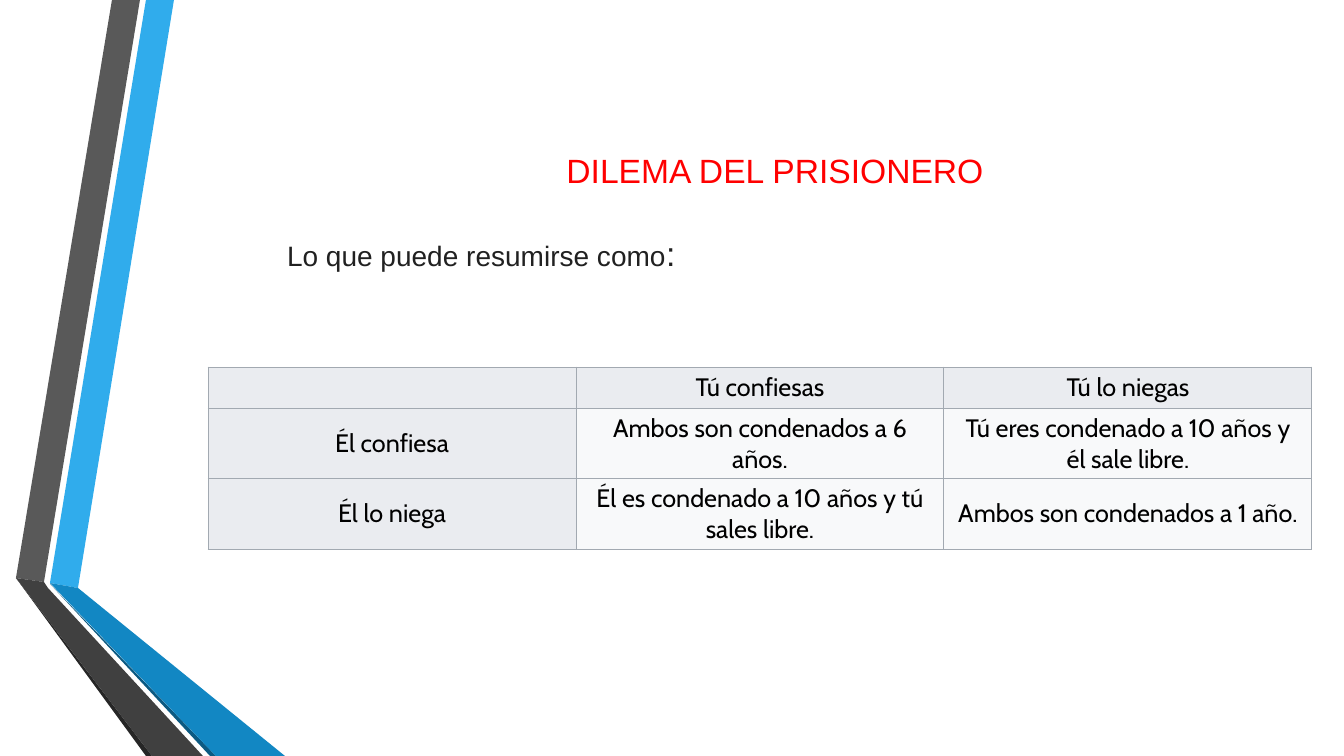
from lxml.etree import SubElement
from pptx import Presentation
from pptx.dml.color import RGBColor
from pptx.enum.text import MSO_ANCHOR, PP_ALIGN
from pptx.oxml.ns import qn
from pptx.util import Pt

PX = 9071  # EMU per px
SLIDE_WIDTH, SLIDE_HEIGHT = 1344, 756
COLORS = {
    "blue": "30ACEC", "deep_blue": "1287C3", "navy": "0C5A82",
    "gray": "595959", "dark_gray": "404040", "black_gray": "262626",
    "title": "FF0000", "body": "212121", "cell_text": "000000",
    "header": "EAECF0", "cell": "F8F9FA", "border": "A2A9B1",
}
RIBBONS = [
    ("blue", [(50, 583), (78, 588), (174, 0), (146, 0)]),
    ("gray", [(140, 0), (112, 0), (16, 578), (44, 582)]),
    ("black_gray", [(16, 578), (146, 756), (152, 756)]),
    ("navy", [(50, 584), (210, 756), (216, 756)]),
    ("deep_blue", [(50, 583), (216, 756), (285, 756), (78, 588)]),
    ("dark_gray", [(203, 756), (48, 588), (44, 582), (16, 578), (152, 756)]),
]
OUTCOMES = [
    ["", "Tú confiesas", "Tú lo niegas"],
    ["Él confiesa", "Ambos son condenados a 6 años.",
     "Tú eres condenado a 10 años y él sale libre."],
    ["Él lo niega", "Él es condenado a 10 años y tú sales libre.",
     "Ambos son condenados a 1 año."],
]


def rgb(name):
    return RGBColor.from_string(COLORS[name])


def to_emu(box):
    return [length * PX for length in box]


def add_run(paragraph, text, color, **font_format):
    run = paragraph.add_run()
    run.text = text
    run.font.color.rgb = rgb(color)
    for attribute, value in font_format.items():
        setattr(run.font, attribute, value)


def format_frame(frame, anchor):
    settings = {
        "margin_left": 0, "margin_right": 0, "margin_top": 0,
        "margin_bottom": 0, "word_wrap": True, "vertical_anchor": anchor,
    }
    for attribute, value in settings.items():
        setattr(frame, attribute, value)


def add_ribbons(slide, left, top):
    for color, points in RIBBONS:
        builder = slide.shapes.build_freeform(*points[0], scale=PX)
        builder.add_line_segments(points[1:], close=True)
        shape = builder.convert_to_shape(left * PX, top * PX)
        shape.shadow.inherit = False
        shape.fill.solid()
        shape.fill.fore_color.rgb = rgb(color)
        shape.line.fill.background()


def place_title(slide, box):
    title = slide.shapes.title
    title.left, title.top, title.width, title.height = to_emu(box)
    format_frame(title.text_frame, MSO_ANCHOR.MIDDLE)
    paragraph = title.text_frame.paragraphs[0]
    paragraph.alignment = PP_ALIGN.CENTER
    add_run(paragraph, "DILEMA DEL PRISIONERO", "title",
            name="Arial", size=Pt(24))


def add_introduction(slide, box):
    frame = slide.shapes.add_textbox(*to_emu(box)).text_frame
    format_frame(frame, MSO_ANCHOR.TOP)
    paragraph = frame.paragraphs[0]
    for text, size in [("Lo que puede resumirse como", 20), (":", 24)]:
        add_run(paragraph, text, "body", name="Arial", size=Pt(size))


def add_borders(cell):
    properties = cell._tc.get_or_add_tcPr()
    for index, side in enumerate(["lnL", "lnR", "lnT", "lnB"]):
        line = SubElement(properties, qn(f"a:{side}"), w=str(Pt(0.75)))
        fill = SubElement(line, qn("a:solidFill"))
        SubElement(fill, qn("a:srgbClr"), val=COLORS["border"])
        properties.insert(index, line)


def add_outcome_table(slide, box, row_heights):
    shape = slide.shapes.add_table(
        len(OUTCOMES), len(OUTCOMES[0]), *to_emu(box))
    table = shape.table
    for row, height in zip(table.rows, row_heights):
        row.height = height * PX
    for row_index, texts in enumerate(OUTCOMES):
        for column_index, text in enumerate(texts):
            cell = table.cell(row_index, column_index)
            is_header = row_index == 0 or column_index == 0
            cell.fill.solid()
            cell.fill.fore_color.rgb = rgb("header" if is_header else "cell")
            cell.vertical_anchor = MSO_ANCHOR.MIDDLE
            add_borders(cell)
            if text:
                paragraph = cell.text_frame.paragraphs[0]
                paragraph.alignment = PP_ALIGN.CENTER
                add_run(paragraph, text, "cell_text", name="Cabin",
                        size=Pt(18), bold=False)


def main():
    presentation = Presentation()
    presentation.slide_width = SLIDE_WIDTH * PX
    presentation.slide_height = SLIDE_HEIGHT * PX
    slide = presentation.slides.add_slide(presentation.slide_layouts[5])
    add_ribbons(slide, 0, 0)
    place_title(slide, (275, 151, 1000, 39))
    add_introduction(slide, (287, 233, 980, 39))
    add_outcome_table(slide, (208, 367, 1104, 181), (41, 70, 70))
    presentation.save("out.pptx")


if __name__ == "__main__":
    main()
